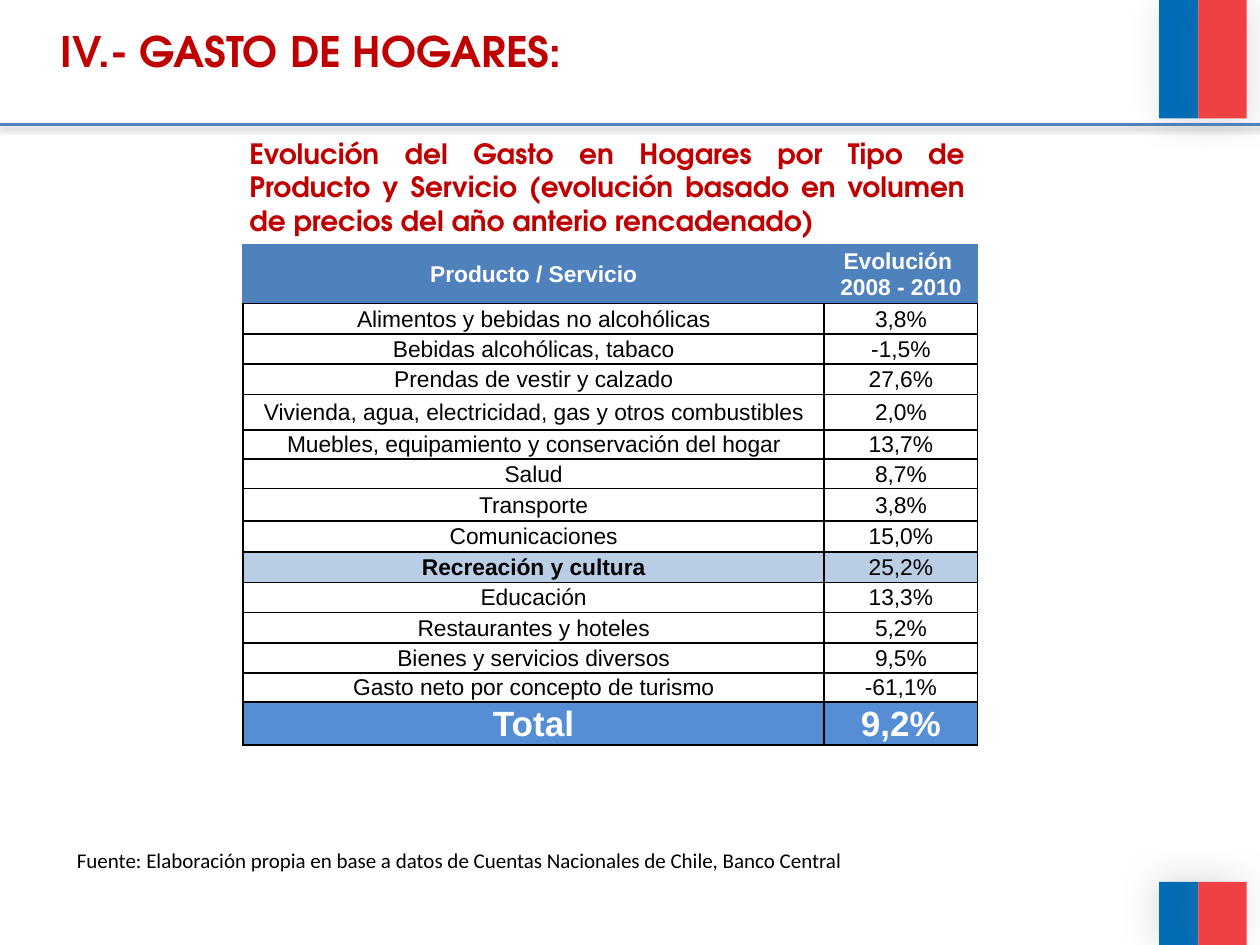
import lxml.etree
import pptx
import pptx.dml.color
import pptx.enum.shapes
import pptx.enum.text
import pptx.oxml.ns
import pptx.util
from pptx.util import Cm

RGBColor = pptx.dml.color.RGBColor
BLACK = RGBColor(0x00, 0x00, 0x00)
WHITE = RGBColor(0xFF, 0xFF, 0xFF)
CRIMSON = RGBColor(0xC0, 0x00, 0x00)
STEEL = RGBColor(0x4F, 0x81, 0xBD)
PALE_BLUE = RGBColor(0xB9, 0xCD, 0xE5)
TOTAL_BLUE = RGBColor(0x55, 0x8E, 0xD5)
FLAG_BLUE = RGBColor(0x00, 0x6C, 0xB7)
FLAG_RED = RGBColor(0xEF, 0x41, 0x44)
SHADOW_GRAY = RGBColor(0x80, 0x80, 0x80)

ALIGN = pptx.enum.text.PP_ALIGN
ANCHOR = pptx.enum.text.MSO_ANCHOR
HEADING_FONT = "TeX Gyre Adventor"

SPENDING = [
    ("Alimentos y bebidas no alcohólicas", "3,8%", 0.61),
    ("Bebidas alcohólicas, tabaco", "-1,5%", 0.61),
    ("Prendas de vestir y calzado", "27,6%", 0.61),
    ("Vivienda, agua, electricidad, gas y otros combustibles", "2,0%", 0.72),
    ("Muebles, equipamiento y conservación del hogar", "13,7%", 0.58),
    ("Salud", "8,7%", 0.6),
    ("Transporte", "3,8%", 0.65),
    ("Comunicaciones", "15,0%", 0.63),
    ("Recreación y cultura", "25,2%", 0.61),
    ("Educación", "13,3%", 0.61),
    ("Restaurantes y hoteles", "5,2%", 0.61),
    ("Bienes y servicios diversos", "9,5%", 0.61),
    ("Gasto neto por concepto de turismo", "-61,1%", 0.58),
]
HIGHLIGHT = "Recreación y cultura"


def add_element(parent, tag, **attributes):
    child = lxml.etree.SubElement(parent, pptx.oxml.ns.qn(tag))
    for name, value in attributes.items():
        child.set(name, str(value))
    return child


def add_color(parent, color, alpha=100):
    fill = add_element(parent, "a:srgbClr", val=color)
    if alpha < 100:
        add_element(fill, "a:alpha", val=alpha * 1000)


def write_text(frame, text, font="Arial", size=13, color=BLACK, bold=False,
               align=ALIGN.LEFT, indent=0):
    """Write each line of text as one paragraph in the given format."""
    for index, line in enumerate(text.split("\n")):
        para = frame.paragraphs[0] if index == 0 else frame.add_paragraph()
        para.alignment = align
        if indent:
            para.level = 1
            properties = para._p.get_or_add_pPr()
            properties.set("marL", str(Cm(indent)))
            properties.set("indent", "0")
        span = para.add_run()
        span.text = line
        span.font.name = font
        span.font.size = pptx.util.Pt(size)
        span.font.bold = bold
        span.font.color.rgb = color


class SlideBuilder:
    def __init__(self, page):
        self.page = page

    def shadow(self, shape, alpha, blur, distance, angle):
        effects = add_element(shape._element.spPr, "a:effectLst")
        outer = add_element(effects, "a:outerShdw",
                            blurRad=pptx.util.Pt(blur), dist=pptx.util.Pt(distance),
                            dir=angle * 60000, algn="ctr", rotWithShape=0)
        add_color(outer, SHADOW_GRAY, alpha)

    def bar(self, left, top, width, height, color, angle):
        bar = self.page.shapes.add_shape(
            pptx.enum.shapes.MSO_SHAPE.RECTANGLE,
            Cm(left), Cm(top), Cm(width), Cm(height))
        bar.fill.solid()
        bar.fill.fore_color.rgb = color
        bar.line.fill.background()
        self.shadow(bar, 25, 20, 3, angle)

    def rule(self, left, right, top):
        rule = self.page.shapes.add_connector(
            pptx.enum.shapes.MSO_CONNECTOR.STRAIGHT,
            Cm(left), Cm(top), Cm(right), Cm(top))
        rule.line.color.rgb = STEEL
        rule.line.width = pptx.util.Pt(2)
        self.shadow(rule, 38, 3.1, 1.6, 90)

    def text(self, left, top, width, height, text, **style):
        box = self.page.shapes.add_textbox(Cm(left), Cm(top), Cm(width), Cm(height))
        box.text_frame.word_wrap = True
        write_text(box.text_frame, text, **style)

    def cell(self, cell, text, fill, borders, **style):
        cell.margin_left = cell.margin_right = cell.margin_top = Cm(0.02)
        cell.margin_bottom = 0
        cell.vertical_anchor = ANCHOR.MIDDLE
        write_text(cell.text_frame, text, align=ALIGN.CENTER, **style)
        properties = cell._tc.get_or_add_tcPr()
        for side, color in zip("LRTB", borders):
            line = add_element(properties, "a:ln" + side, w=pptx.util.Pt(1))
            add_color(add_element(line, "a:solidFill"), color)
        cell.fill.solid()
        cell.fill.fore_color.rgb = fill

    def table(self, left, top, widths, heights):
        table = self.page.shapes.add_table(
            len(heights), len(widths), Cm(left), Cm(top),
            Cm(sum(widths)), Cm(sum(heights))).table
        table.first_row = table.horz_banding = False
        for column, width in zip(table.columns, widths):
            column.width = Cm(width)
        for row, height in zip(table.rows, heights):
            row.height = Cm(height)
        return table


def main():
    deck = pptx.Presentation()
    deck.slide_width, deck.slide_height = Cm(25.4), Cm(19.05)
    builder = SlideBuilder(deck.slides.add_slide(deck.slide_layouts[6]))

    # Flag bars in the right corners
    for top, height, angle in ((0, 2.39, 45), (17.78, 1.27, 215)):
        builder.bar(23.37, top, 0.79, height, FLAG_BLUE, angle)
        builder.bar(24.16, top, 0.97, height, FLAG_RED, angle)

    # Title, rule and source
    heading = dict(font=HEADING_FONT, color=CRIMSON, bold=True,
                   align=ALIGN.JUSTIFY, indent=1.27)
    builder.text(-0.3, 0.38, 23.27, 1.96, "IV.- GASTO DE HOGARES:", size=24, **heading)
    builder.rule(0, 25.4, 2.51)
    builder.text(1.3, 16.97, 20.6, 0.76,
                 "Fuente: Elaboración propia en base a datos de Cuentas "
                 "Nacionales de Chile, Banco Central", font="Calibri", size=12)

    # Spending table: header, products, total
    heights = [1.19] + [height for _, _, height in SPENDING] + [0.87]
    table = builder.table(4.9, 4.93, (11.71, 3.1), heights)
    rows = [("Producto / Servicio", "Evolución \n2008 - 2010")]
    rows += [(product, change) for product, change, _ in SPENDING]
    rows.append(("Total", "9,2%"))
    last = len(rows) - 1
    for row, texts in enumerate(rows):
        for column, text in enumerate(texts):
            fill, borders, style = WHITE, [BLACK] * 4, {}
            if row == 0:
                fill, borders = STEEL, [STEEL, STEEL, STEEL, BLACK]
                style = dict(color=WHITE, bold=True)
            elif row == last:
                fill, style = TOTAL_BLUE, dict(color=WHITE, bold=True, size=20)
            elif texts[0] == HIGHLIGHT:
                fill, style = PALE_BLUE, dict(bold=column == 0)
            builder.cell(table.cell(row, column), text, fill, borders, **style)

    # Table heading
    builder.text(3.51, 2.62, 16.2, 2.31,
                 "Evolución del Gasto en Hogares por Tipo de Producto y Servicio "
                 "(evolución basado en volumen de precios del año anterio rencadenado)",
                 size=16, **heading)

    deck.save("out.pptx")


if __name__ == "__main__":
    main()
